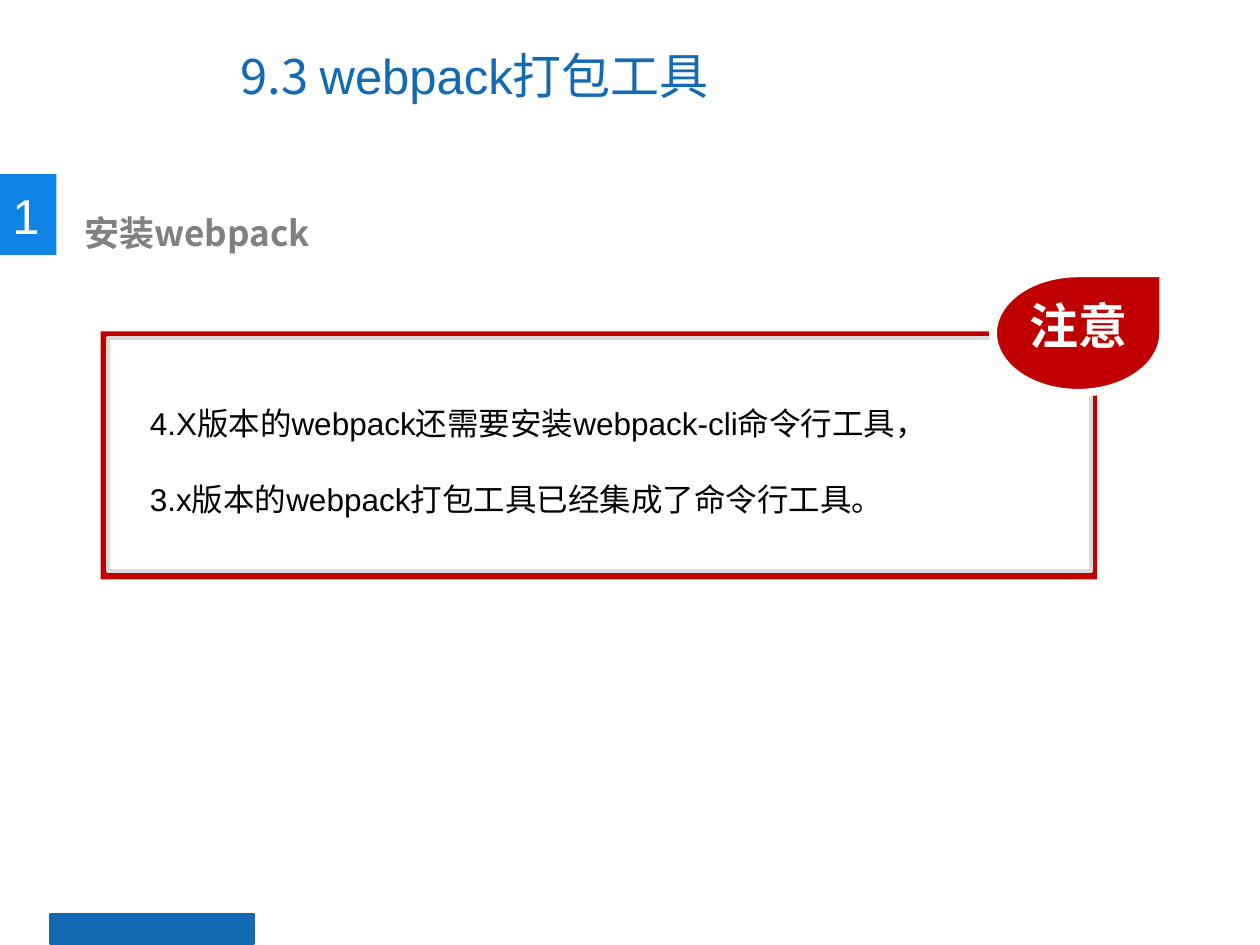
from lxml import etree
from pptx import Presentation
from pptx.dml.color import RGBColor
from pptx.enum.shapes import MSO_SHAPE
from pptx.enum.text import MSO_ANCHOR, PP_ALIGN
from pptx.oxml.ns import qn
from pptx.util import Cm, Pt

RECTANGLE, TEARDROP = MSO_SHAPE.RECTANGLE, MSO_SHAPE.TEAR
MIDDLE, LEFT = MSO_ANCHOR.MIDDLE, PP_ALIGN.LEFT
LATIN, CHINESE = "Arial", "Noto Sans CJK SC"
TITLE_ONLY = 5

WHITE = RGBColor(0xFF, 0xFF, 0xFF)
BLACK = RGBColor(0x00, 0x00, 0x00)
GREY = RGBColor(0x80, 0x80, 0x80)
PALE_GREY = RGBColor(0xD9, 0xD9, 0xD9)
NAVY = RGBColor(0x13, 0x69, 0xB2)
BLUE = RGBColor(0x0F, 0x83, 0xE3)
RED = RGBColor(0xC0, 0x00, 0x00)

TITLE_PARTS = (("9.3 ", CHINESE), ("webpack", LATIN), ("打包工具", CHINESE))
NOTES = (
    "4.X版本的webpack还需要安装webpack-cli命令行工具，",
    "3.x版本的webpack打包工具已经集成了命令行工具。",
)


def place(element, box):
    """Move and size an element to a box given in centimetres."""
    element.left, element.top, element.width, element.height = map(Cm, box)


def style(paragraph, size, color, name, bold=False):
    """Set the paragraph's font, with the Chinese face for East Asian text."""
    font = paragraph.font
    font.size, font.bold, font.name = Pt(size), bold, name
    font.color.rgb = color
    defaults = paragraph._p.pPr.find(qn("a:defRPr"))
    etree.SubElement(defaults, qn("a:ea"), typeface=CHINESE)


def add_panel(slide, preset, box, fill, outline=None, outline_width=0):
    """Add a flat filled shape, outlined if a colour is given."""
    panel = slide.shapes.add_shape(preset, *map(Cm, box))
    panel.shadow.inherit = False
    panel.fill.solid()
    panel.fill.fore_color.rgb = fill
    if outline is None:
        panel.line.fill.background()
    else:
        panel.line.color.rgb = outline
        panel.line.width = Pt(outline_width)


def add_label(slide, box, lines, size, color, name,
              bold=False, wrap=True, spacing=None):
    """Add a text box with one paragraph for each line."""
    frame = slide.shapes.add_textbox(*map(Cm, box)).text_frame
    frame.word_wrap = wrap
    frame.text = "\n".join(lines)
    for paragraph in frame.paragraphs:
        style(paragraph, size, color, name, bold)
        paragraph.line_spacing = spacing


def set_title(slide):
    """Fill the title placeholder, switching faces between its parts."""
    title = slide.shapes.title
    place(title, (4.6, 0.43, 13.11, 2.16))
    title.text_frame.vertical_anchor = MIDDLE
    paragraph = title.text_frame.paragraphs[0]
    paragraph.alignment = LEFT
    style(paragraph, 28, NAVY, CHINESE)
    for wording, face in TITLE_PARTS:
        run = paragraph.add_run()
        run.text = wording
        run.font.name = face


def add_section_heading(slide):
    """Add the numbered tab and the heading beside it."""
    add_panel(slide, RECTANGLE, (0, 3.51, 1.14, 1.63), BLUE)
    add_label(slide, (0, 3.61, 1.07, 1.45), ["1"], 28, WHITE, LATIN, wrap=False)
    add_label(slide, (1.45, 4.14, 12.8, 1.12), ["安装webpack"],
              20, GREY, CHINESE, bold=True)


def add_notice(slide):
    """Add the framed notice with its badge."""
    add_panel(slide, RECTANGLE, (2.03, 6.68, 20.09, 5), RED)
    add_panel(slide, RECTANGLE, (2.18, 6.81, 19.81, 4.7), WHITE, PALE_GREY, 2)
    add_panel(slide, TEARDROP, (20.02, 5.51, 3.43, 2.41), RED, WHITE, 4.5)
    add_label(slide, (20.5, 5.84, 2.51, 1.45), ["注意"],
              28, WHITE, CHINESE, bold=True, wrap=False)
    add_label(slide, (2.77, 7.26, 17.75, 3.1), NOTES,
              18, BLACK, LATIN, spacing=2.0)


def main():
    """Build the slide and save it."""
    presentation = Presentation()
    presentation.slide_width, presentation.slide_height = Cm(25.4), Cm(19.05)
    slide = presentation.slides.add_slide(presentation.slide_layouts[TITLE_ONLY])
    add_panel(slide, RECTANGLE, (1.02, 18.44, 4.09, 0.58), NAVY, NAVY, 2.25)
    set_title(slide)
    add_section_heading(slide)
    add_notice(slide)
    presentation.save("out.pptx")


if __name__ == "__main__":
    main()
